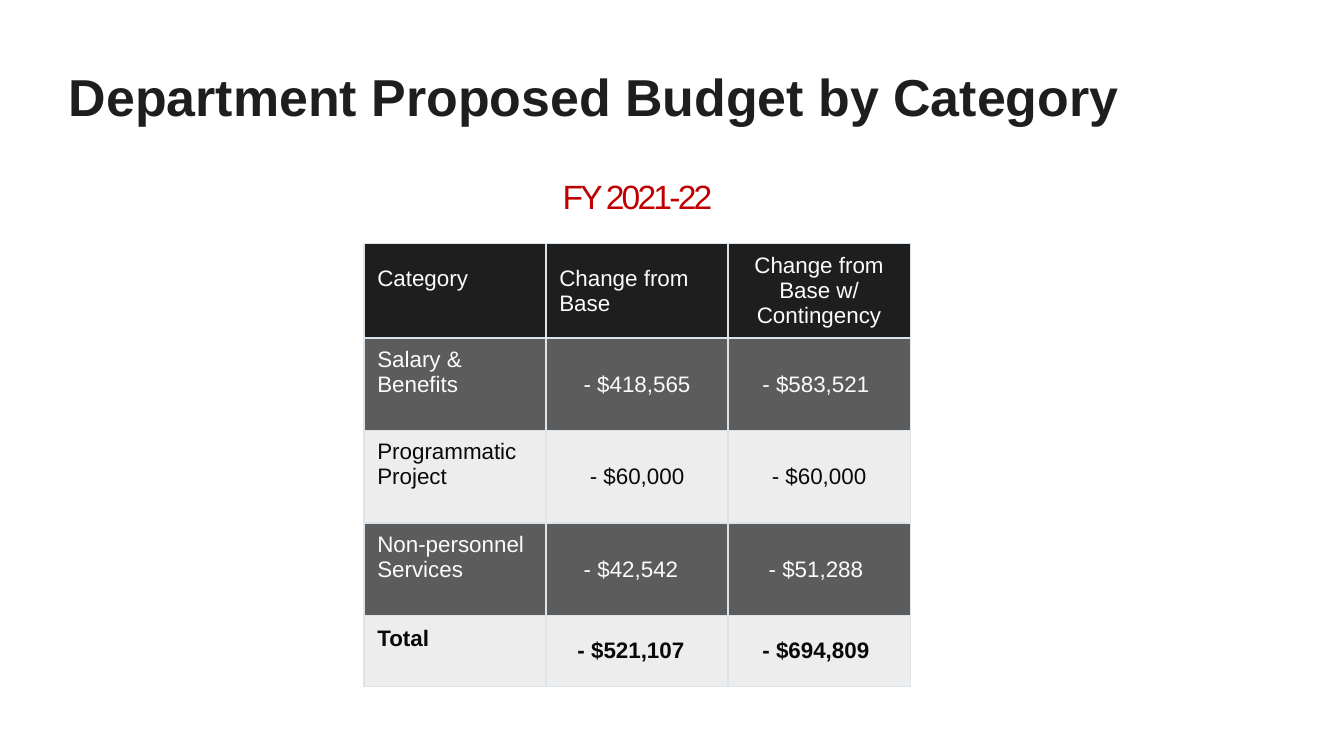
"""Build the slide of proposed budget changes by category for FY 2021-22."""
from lxml.etree import SubElement
from pptx import Presentation
from pptx.dml.color import RGBColor
from pptx.enum.text import MSO_ANCHOR as Anchor, PP_ALIGN as Align
from pptx.oxml.ns import qn
from pptx.util import Cm, Pt


def style(paragraph, size, color, bold=False, align=Align.LEFT):
    paragraph.alignment = align
    font = paragraph.font
    font.name, font.size, font.bold = "Arial", Pt(size), bold
    font.color.rgb = RGBColor.from_string(color)


def add_line(slide, text, left, top, width, height):
    frame = slide.shapes.add_textbox(Cm(left), Cm(top), Cm(width), Cm(height)).text_frame
    frame.word_wrap = True
    frame.margin_left = frame.margin_right = frame.margin_top = frame.margin_bottom = 0
    paragraph = frame.paragraphs[0]
    paragraph.text = text
    return paragraph


deck = Presentation()
deck.slide_width, deck.slide_height = Cm(25.4), Cm(14.28)
slide = deck.slides.add_slide(deck.slide_layouts[6])

title = add_line(slide, "Department Proposed Budget by Category", 1.3, 1.22, 20.2, 1.17)
style(title, 27.8, "1E1E1E", bold=True)

fiscal_year = add_line(slide, "FY 2021-22", 9.5, 3.4, 5.1, 0.66)
style(fiscal_year, 18, "C00000", align=Align.CENTER)
fiscal_year.line_spacing = 0.9
fiscal_year.space_before = Pt(0.7)
fiscal_year.runs[0].font._element.set("spc", "-150")

budget = [
    ("Category", "Change from Base", "Change from Base w/ Contingency"),
    ("Salary & Benefits", "- $418,565", "- $583,521"),
    ("Programmatic Project", "- $60,000", "- $60,000"),
    ("Non-personnel Services", "- $42,542", "- $51,288"),
    ("Total", "- $521,107", "- $694,809"),
]
row_heights = [1.76, 1.67, 1.67, 1.67, 1.34]
fills = ["1E1E1E", "5C5C5C", "EDEDED", "5C5C5C", "EDEDED"]
right_shifts = {(1, 2): 0.12, (3, 1): 0.23, (3, 2): 0.12, (4, 1): 0.23, (4, 2): 0.12}

table = slide.shapes.add_table(
    len(budget), 3, Cm(6.88), Cm(4.6), Cm(3 * 3.44), Cm(sum(row_heights))
).table
for column in table.columns:
    column.width = Cm(3.44)

for r, (entries, height, fill) in enumerate(zip(budget, row_heights, fills)):
    table.rows[r].height = Cm(height)
    ink = "0A0908" if fill == "EDEDED" else "FBFBFB"
    for c, entry in enumerate(entries):
        cell = table.cell(r, c)
        cell.text = entry
        cell.vertical_anchor = Anchor.MIDDLE
        cell.margin_left = Cm(0.25)
        cell.margin_right = Cm(0.25 + right_shifts.get((r, c), 0))
        cell.margin_top = Cm(0.13)
        cell.margin_bottom = Cm(0.6 if c == 0 else 0.13)
        centred = c == 2 or (c == 1 and r > 0)
        style(cell.text_frame.paragraphs[0], 12, ink, bold=entries[0] == "Total",
              align=Align.CENTER if centred else Align.LEFT)
        properties = cell._tc.get_or_add_tcPr()
        for side in ("lnL", "lnR", "lnT", "lnB"):
            border = SubElement(properties, qn(f"a:{side}"), w=str(Pt(0.75)))
            SubElement(SubElement(border, qn("a:solidFill")), qn("a:srgbClr"), val="DAE4EA")
        cell.fill.solid()
        cell.fill.fore_color.rgb = RGBColor.from_string(fill)

deck.save("out.pptx")
